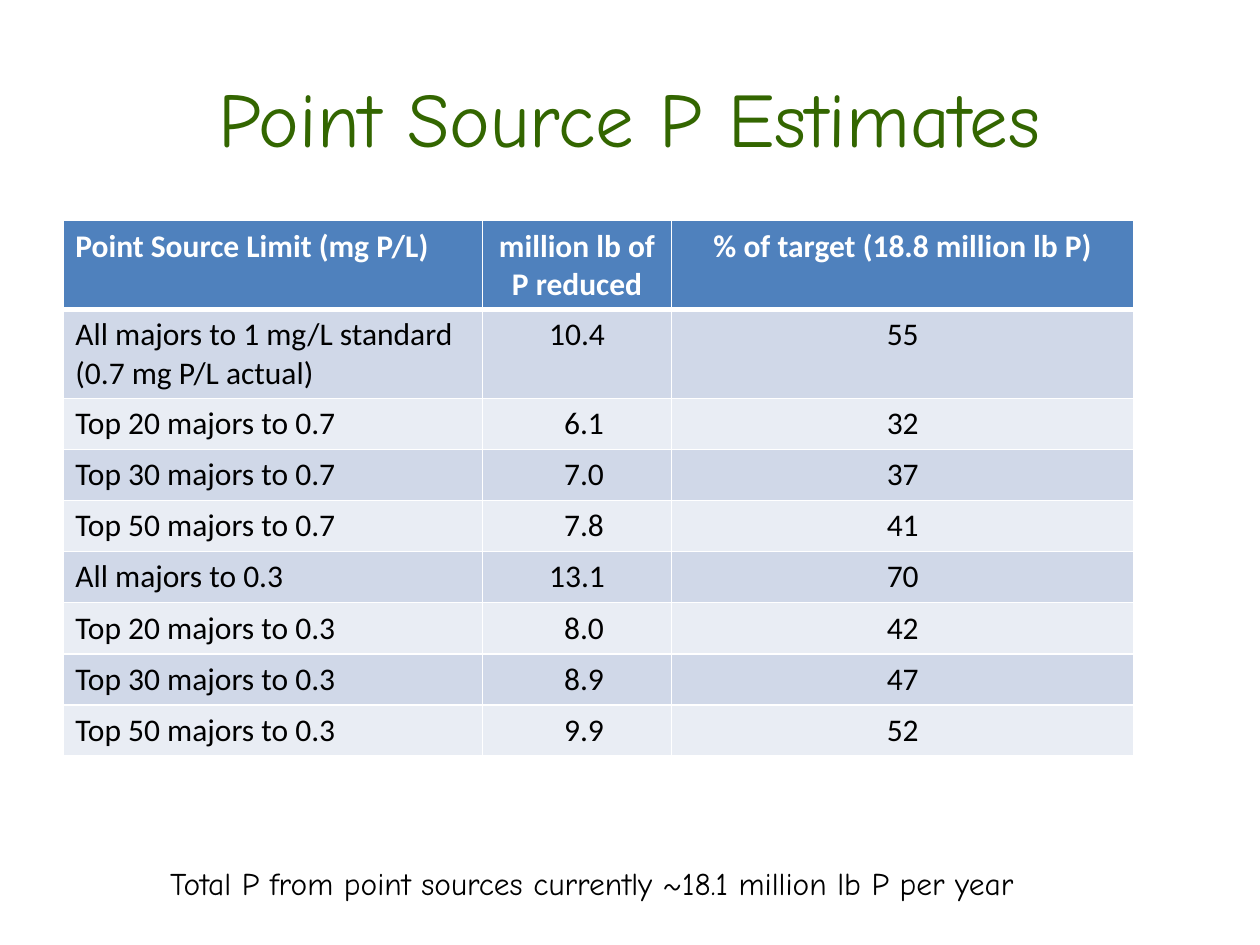
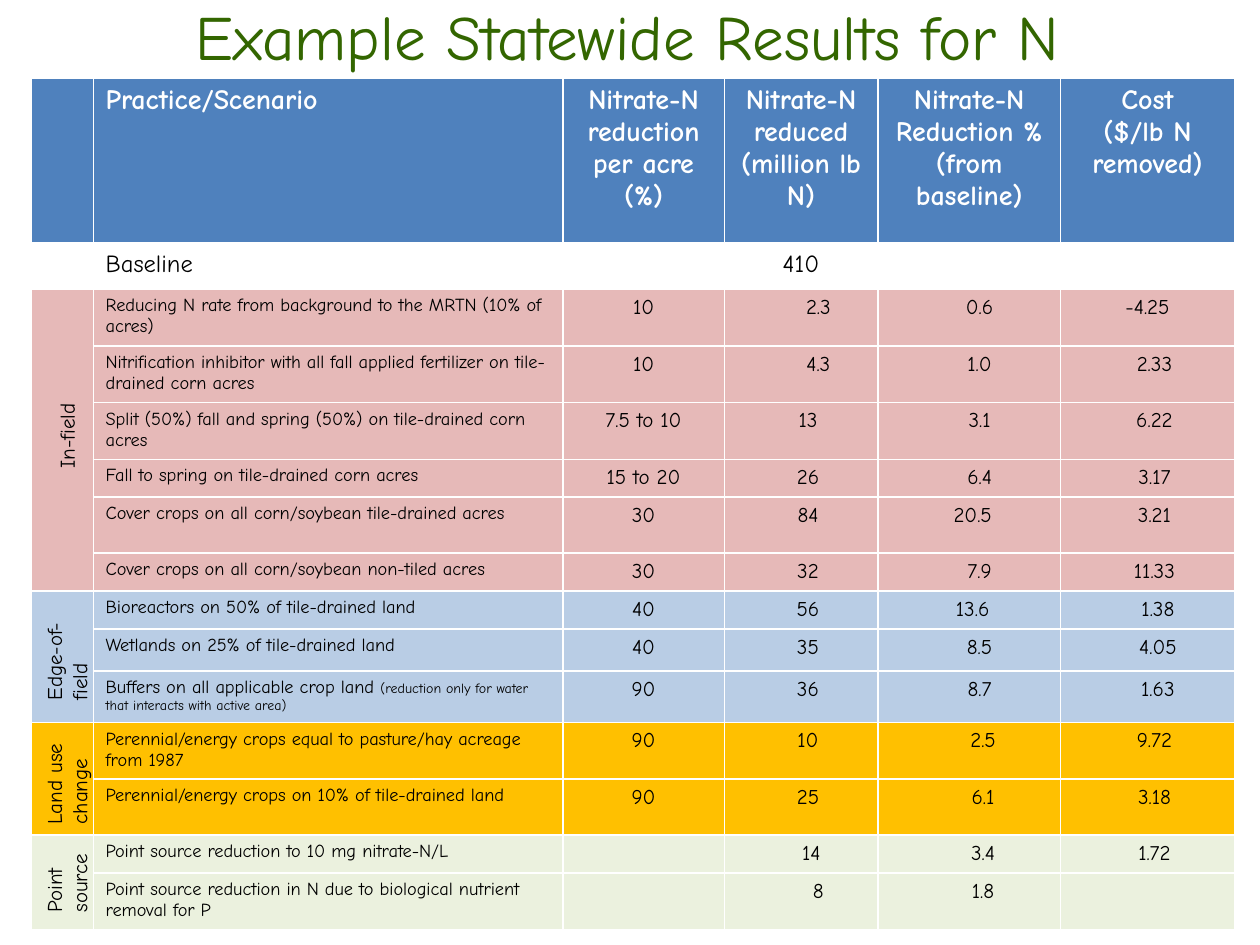
from lxml.etree import SubElement
from pptx import Presentation
from pptx.dml.color import RGBColor
from pptx.enum.text import MSO_ANCHOR, PP_ALIGN
from pptx.oxml.ns import qn
from pptx.util import Cm, Pt

GREEN = RGBColor(0x33, 0x66, 0x00)
BLUE = RGBColor(0x4F, 0x81, 0xBD)
BAND_DARK = RGBColor(0xD0, 0xD8, 0xE8)
BAND_LIGHT = RGBColor(0xE9, 0xED, 0xF4)
ROSE = RGBColor(0xE6, 0xB9, 0xB8)
SKY = RGBColor(0xB9, 0xCD, 0xE5)
GOLD = RGBColor(0xFF, 0xC0, 0x00)
SAGE = RGBColor(0xEB, 0xF1, 0xDE)
WHITE = RGBColor(0xFF, 0xFF, 0xFF)
BLACK = RGBColor(0x00, 0x00, 0x00)
HAND = "Comic Neue"
PLAIN = "Calibri"
CELL_MARGIN = 0.25
INDENT_STEP = 0.14

# A value may come as (text, indent steps), which lines up its digits.
LIMIT_HEADINGS = ["Point Source Limit (mg P/L)", "million lb of P reduced",
                  "% of target (18.8 million lb P)"]
LIMITS = [
    ("All majors to 1 mg/L standard (0.7 mg P/L actual)", "10.4", "55"),
    ("Top 20 majors to 0.7", ("6.1", 2), "32"),
    ("Top 30 majors to 0.7", ("7.0", 2), "37"),
    ("Top 50 majors to 0.7", ("7.8", 2), "41"),
    ("All majors to 0.3", "13.1", "70"),
    ("Top 20 majors to 0.3", ("8.0", 2), "42"),
    ("Top 30 majors to 0.3", ("8.9", 2), "47"),
    ("Top 50 majors to 0.3", ("9.9", 2), "52"),
]
LIMIT_WIDTHS = [8.46, 3.81, 9.32]
LIMIT_HEIGHTS = [1.79, 1.79] + [1.03] * 7
TOTAL = "Total P from point sources currently ~18.1 million lb P per year"

PRACTICE_HEADINGS = [
    "", "Practice/Scenario", "Nitrate-N reduction per acre (%)",
    "Nitrate-N reduced (million lb N)",
    "Nitrate-N Reduction % (from baseline)", "Cost\n($/lb N removed)"]
BASELINE = ["", "Baseline", "", "410", "", ""]
# label, colour, label centre from the top, label width and height, rows
GROUPS = [
    ("In-field", ROSE, 8.66, 2.08, 0.76, [
        ("Reducing N rate from background to the MRTN (10% of acres)",
         "10", ("2.3", 5), ("0.6", 3), "-4.25"),
        ("Nitrification inhibitor with all fall applied fertilizer on "
         "tile-drained corn acres", "10", ("4.3", 5), ("1.0", 3), ("2.33", 2)),
        ("Split (50%) fall and spring (50%) on tile-drained corn acres",
         "7.5 to 10", ("13", 2), ("3.1", 3), ("6.22", 2)),
        ("Fall to spring on tile-drained corn acres",
         "15 to 20", ("26", 2), ("6.4", 3), ("3.17", 2)),
        ("Cover crops on all corn/soybean tile-drained acres",
         "30", ("84", 2), ("20.5", 1), ("3.21", 2)),
        ("Cover crops on all corn/soybean non-tiled acres",
         "30", ("32", 2), ("7.9", 3), ("11.33", 2)),
    ]),
    ("Edge-of-field", SKY, 13.0, 2.74, 1.27, [
        ("Bioreactors on 50% of tile-drained land",
         "40", ("56", 2), ("13.6", 1), ("1.38", 3)),
        ("Wetlands on 25% of tile-drained land",
         "40", ("35", 2), ("8.5", 3), ("4.05", 3)),
        ("Buffers on all applicable crop land ",
         "90", ("36", 2), ("8.7", 3), ("1.63", 3)),
    ]),
    ("Land use change", GOLD, 15.62, 2.49, 1.27, [
        ("Perennial/energy crops equal to pasture/hay acreage from 1987",
         "90", ("10", 2), ("2.5", 4), ("9.72", 2)),
        ("Perennial/energy crops on 10% of tile-drained land",
         "90", ("25", 2), ("6.1", 4), ("3.18", 2)),
    ]),
    ("Point source", SAGE, 17.68, 1.93, 1.27, [
        ("Point source reduction to 10 mg nitrate-N/L",
         "", ("14", 3), ("3.4", 4), ("1.72", 2)),
        ("Point source reduction in N due to biological nutrient removal for P",
         "", ("8", 5), ("1.8", 4), ""),
    ]),
]
FINE_PRINT = {
    "Buffers on all applicable crop land ":
        "(reduction only for water that interacts with active area)"}
PRACTICE_WIDTHS = [1.24, 9.47, 3.25, 3.1, 3.68, 3.51]
PRACTICE_HEIGHTS = [3.35, 0.91, 1.13, 1.13, 1.13, 0.75, 1.13, 0.75, 0.75,
                    0.85, 1.03, 1.13, 1.13, 0.75, 1.09]
LABEL_CENTRE = 1.34


def add_span(para, text, size, font, colour, bold=False):
    span = para.add_run()
    span.text = text
    span.font.size = Pt(size)
    span.font.name = font
    span.font.color.rgb = colour
    span.font.bold = bold


def add_text(page, place, text, size, colour=BLACK, align=PP_ALIGN.LEFT,
             anchor=MSO_ANCHOR.TOP):
    box = page.shapes.add_textbox(*[Cm(length) for length in place])
    frame = box.text_frame
    frame.word_wrap = True
    frame.vertical_anchor = anchor
    para = frame.paragraphs[0]
    para.alignment = align
    add_span(para, text, size, HAND, colour)
    return box


def add_title(page, place, text, size):
    add_text(page, place, text, size, GREEN, PP_ALIGN.CENTER, MSO_ANCHOR.MIDDLE)


def add_grid(page, left, top, widths, heights):
    shape = page.shapes.add_table(len(heights), len(widths), Cm(left), Cm(top),
                                  Cm(sum(widths)), Cm(sum(heights)))
    table = shape.table
    table.first_row = table.horz_banding = False
    for column, width in zip(table.columns, widths):
        column.width = Cm(width)
    for row, height in zip(table.rows, heights):
        row.height = Cm(height)
    return table


def add_borders(cell, row_number):
    """White lines all round, thicker between the heading and the body."""
    points = {"a:lnL": 1, "a:lnR": 1,
              "a:lnT": 3 if row_number == 1 else 1,
              "a:lnB": 3 if row_number == 0 else 1}
    properties = cell._tc.get_or_add_tcPr()
    for tag, width in points.items():
        line = SubElement(properties, qn(tag), w=str(Pt(width)))
        fill = SubElement(line, qn("a:solidFill"))
        SubElement(fill, qn("a:srgbClr"), val=str(WHITE))


def fill_row(table, row_number, values, fill, sizes, font, text_column=0):
    """Write one row; the columns after text_column are centred."""
    heading = row_number == 0
    colour = WHITE if heading else BLACK
    for column, (value, size) in enumerate(zip(values, sizes)):
        text, steps = value if isinstance(value, tuple) else (value, 0)
        cell = table.cell(row_number, column)
        add_borders(cell, row_number)
        cell.fill.solid()
        cell.fill.fore_color.rgb = fill
        cell.margin_left = Cm(CELL_MARGIN + steps * INDENT_STEP)
        frame = cell.text_frame
        for number, line in enumerate(text.split("\n")):
            para = frame.add_paragraph() if number else frame.paragraphs[0]
            if column > text_column:
                para.alignment = PP_ALIGN.CENTER
            if line:
                add_span(para, line, size, font, colour, heading)
            else:
                SubElement(para._p, qn("a:endParaRPr"), sz=str(size * 100))
            if line in FINE_PRINT:
                add_span(para, FINE_PRINT[line], 8, font, colour)


def build_estimates(page):
    add_title(page, (1.27, 0.76, 22.86, 3.18), "Point Source P Estimates", 44)
    table = add_grid(page, 1.27, 4.45, LIMIT_WIDTHS, LIMIT_HEIGHTS)
    for number, values in enumerate([LIMIT_HEADINGS] + LIMITS):
        band = BAND_DARK if number % 2 else BAND_LIGHT
        fill_row(table, number, values, band if number else BLUE, [18] * 3, PLAIN)
    add_text(page, (3.18, 17.3, 19.46, 1.02), TOTAL, 18)


def build_results(page):
    add_title(page, (0.05, -0.05, 25.2, 1.52),
              "Example Statewide Results for N", 36)
    table = add_grid(page, 0.64, 1.57, PRACTICE_WIDTHS, PRACTICE_HEIGHTS)
    fill_row(table, 0, PRACTICE_HEADINGS, BLUE, [16] * 6, HAND, 1)
    fill_row(table, 1, BASELINE, WHITE, [14] * 6, HAND, 1)
    first = 2
    for label, colour, centre, width, height, rows in GROUPS:
        for number, values in enumerate(rows, first):
            fill_row(table, number, ("",) + values, colour,
                     [12, 10.5, 12, 12, 12, 12], HAND, 1)
        last = first + len(rows) - 1
        table.cell(first, 0).merge(table.cell(last, 0))
        first = last + 1
        place = (LABEL_CENTRE - width / 2, centre - height / 2, width, height)
        add_text(page, place, label, 12).rotation = 270


def main():
    deck = Presentation()
    deck.slide_width, deck.slide_height = Cm(25.4), Cm(19.05)
    for build in (build_estimates, build_results):
        build(deck.slides.add_slide(deck.slide_layouts[6]))
    deck.save("out.pptx")


if __name__ == "__main__":
    main()
